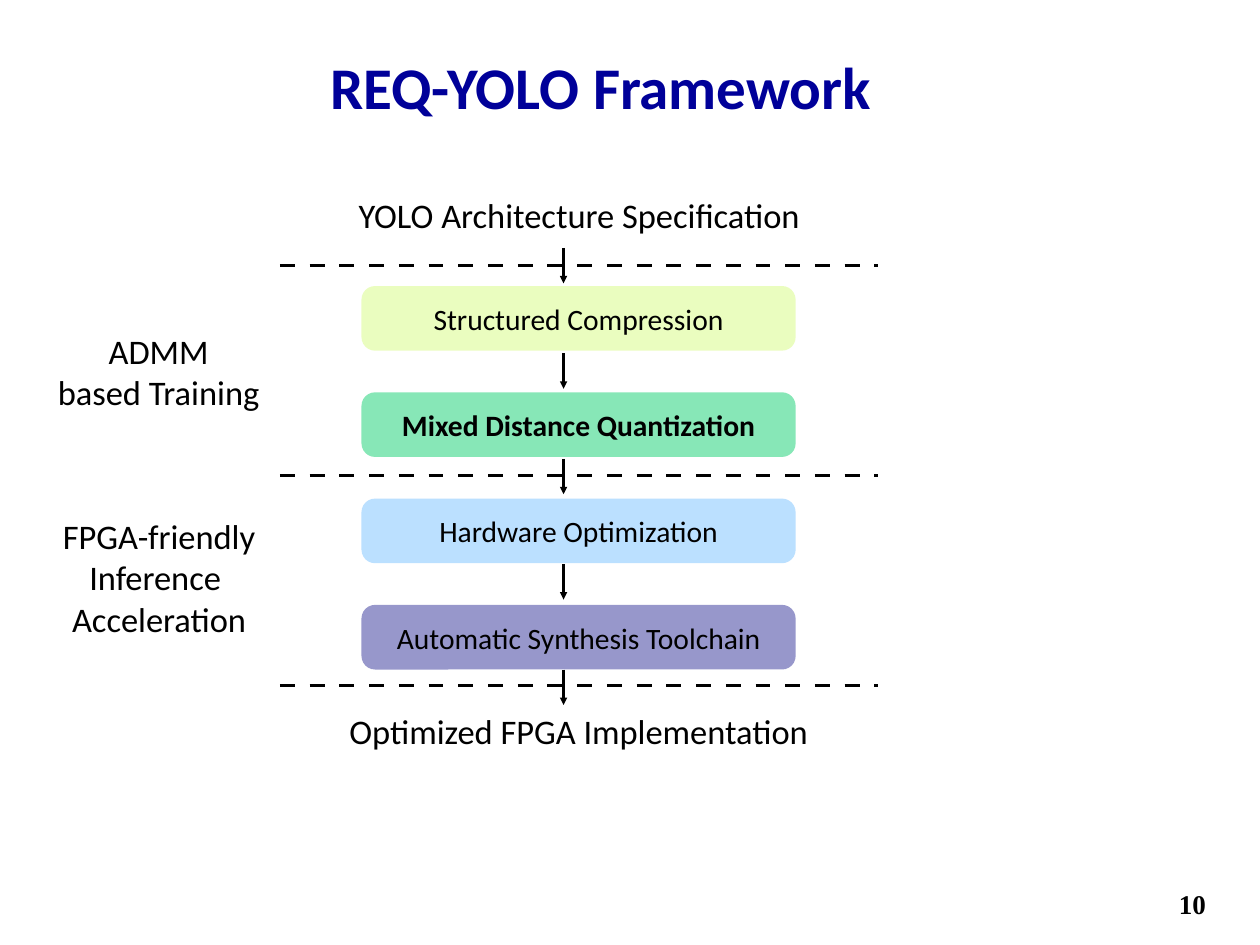
from dataclasses import dataclass

from lxml import etree
from pptx import Presentation
from pptx.dml.color import RGBColor
from pptx.enum import shapes, text
from pptx.oxml import ns
from pptx.util import Inches, Pt

BLACK = RGBColor(0, 0, 0)
NAVY = RGBColor(0x00, 0x00, 0x99)
LIME = RGBColor(0xD4, 0xFB, 0x79)
GREEN = RGBColor(0x00, 0xCD, 0x66)
SKY = RGBColor(0x63, 0xB8, 0xFF)
INDIGO = RGBColor(0x33, 0x33, 0x99)


@dataclass
class Step:
    name: str
    color: RGBColor
    alpha: int
    bold: bool = False


@dataclass
class Label:
    lines: str
    left: float
    top: float
    width: float
    height: float


STEPS = [
    Step("Structured Compression", LIME, 47),
    Step("Mixed Distance Quantization", GREEN, 47, True),
    Step("Hardware Optimization", SKY, 43),
    Step("Automatic Synthesis Toolchain", INDIGO, 51),
]
LABELS = [
    Label("ADMM\nbased Training", 0.59, 3.65, 2.4, 1.08),
    Label("FPGA-friendly\nInference \nAcceleration", 0.6, 5.73, 2.39, 1.57),
    Label("YOLO Architecture Specification", 3.98, 2.12, 5.11, 0.6),
    Label("Optimized FPGA Implementation", 3.88, 7.95, 5.3, 0.6),
]
STEP_TOP, STEP_GAP = 3.23, 1.2
ARROW_X, ARROW_TOP, ARROW_GAP, ARROW_LEN = 6.36, 2.8, 1.19, 0.4
RULE_TOP, RULE_GAP = 3, 2.37


def add_sub(parent, tag: str, **attrs: str):
    return etree.SubElement(parent, ns.qn(tag), attrs)


def write(frame, words: str, size: int, color: RGBColor = BLACK,
          bold: bool = False, face: str = "Calibri", inset: float = 0.06,
          align=text.PP_ALIGN.CENTER) -> None:
    frame.text = words
    frame.vertical_anchor = text.MSO_ANCHOR.MIDDLE
    frame.margin_left = frame.margin_right = Inches(inset)
    frame.margin_top = frame.margin_bottom = Inches(inset)
    for para in frame.paragraphs:
        para.alignment = align
        font = para.font
        font.name, font.size, font.bold = face, Pt(size), bold
        font.color.rgb = color


def add_label(slide, label: Label, **style) -> None:
    box = slide.shapes.add_textbox(
        Inches(label.left), Inches(label.top), Inches(label.width), Inches(label.height))
    box.text_frame.word_wrap = False
    write(box.text_frame, label.lines, **style)


def add_line(slide, x1: float, y1: float, x2: float, y2: float):
    """Draw a plain black line and return its a:ln element."""
    line = slide.shapes.add_connector(
        shapes.MSO_CONNECTOR.STRAIGHT, Inches(x1), Inches(y1), Inches(x2), Inches(y2))
    line.line.width = Pt(2)
    line.line.color.rgb = BLACK
    props = line.line._get_or_add_ln()
    add_sub(props.getparent(), "a:effectLst")
    return props


def add_rule(slide, y: float) -> None:
    dash = add_sub(add_line(slide, 3.16, y, 9.91, y), "a:custDash")
    add_sub(dash, "a:ds", d="600000", sp="600000")


def add_arrow(slide, y: float) -> None:
    props = add_line(slide, ARROW_X, y, ARROW_X, y + ARROW_LEN)
    add_sub(props, "a:tailEnd", type="triangle")


def add_step(slide, step: Step, y: float) -> None:
    box = slide.shapes.add_shape(
        shapes.MSO_SHAPE.ROUNDED_RECTANGLE,
        Inches(4.08), Inches(y), Inches(4.9), Inches(0.73))
    box.adjustments[0] = 0.21
    box.shadow.inherit = False
    box.fill.solid()
    box.fill.fore_color.rgb = step.color
    tint = box.fill._xPr.find(".//" + ns.qn("a:srgbClr"))
    add_sub(tint, "a:alpha", val=str(step.alpha * 1000))
    box.line.fill.background()
    write(box.text_frame, step.name, 24, bold=step.bold)


def add_title(slide) -> None:
    title = slide.shapes.title
    title.left, title.top = Inches(0.38), Inches(0.5)
    title.width, title.height = Inches(12.8), Inches(1.05)
    title.text_frame.auto_size = text.MSO_AUTO_SIZE.NONE
    write(title.text_frame, "REQ-YOLO Framework", 48, NAVY, True, inset=0)
    title.text_frame.paragraphs[0].line_spacing = 0.9


def main() -> None:
    deck = Presentation()
    deck.slide_width, deck.slide_height = Inches(14.22), Inches(10.67)
    slide = deck.slides.add_slide(deck.slide_layouts[5])
    add_title(slide)
    for i in range(3):
        add_rule(slide, RULE_TOP + i * RULE_GAP)
    for i, step in enumerate(STEPS):
        add_step(slide, step, STEP_TOP + i * STEP_GAP)
    for i in range(len(STEPS) + 1):
        add_arrow(slide, ARROW_TOP + i * ARROW_GAP)
    for label in LABELS:
        add_label(slide, label, size=28)
    add_label(slide, Label("10", 13.29, 10.03, 0.32, 0.35), size=22, bold=True,
              face="Times New Roman", inset=0, align=text.PP_ALIGN.RIGHT)
    deck.save("out.pptx")


if __name__ == "__main__":
    main()
